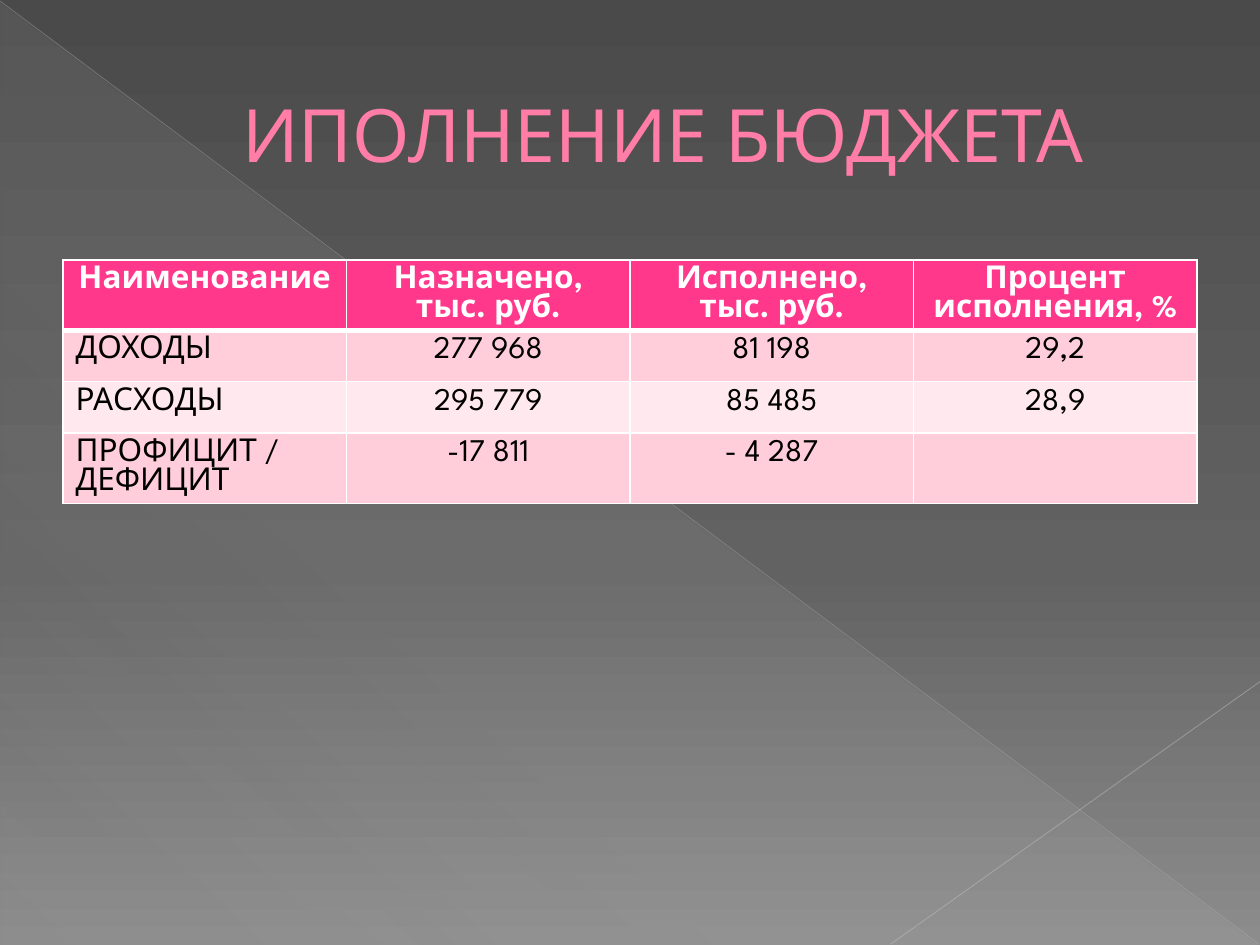
import pptx
import pptx.dml.color
import pptx.enum.shapes
import pptx.enum.text
import pptx.oxml
import pptx.oxml.ns
import pptx.util
from lxml import etree

Pt = pptx.util.Pt
qn = pptx.oxml.ns.qn
ALIGN = pptx.enum.text.PP_ALIGN
COLORS = {
    "title": "FF7DA7", "outline": "B12761", "header": "FF388C",
    "band_dark": "FFCEDA", "band_light": "FFE8EE",
    "white": "FFFFFF", "black": "000000", "haze": "D2D2D2",
    "diagonal": "BFBFBF", "corner": "C6C6C6",
    "bg_top": "4A4A4A", "bg_mid": "626262", "bg_bottom": "8C8C8C",
}
ROWS = [
    ["Наименование", "Назначено, тыс. руб.", "Исполнено, тыс. руб.", "Процент исполнения, %"],
    ["ДОХОДЫ", "277 968", "81 198", "29,2"],
    ["РАСХОДЫ", "295 779", "85 485", "28,9"],
    ["ПРОФИЦИТ / ДЕФИЦИТ", "-17 811", "- 4 287", ""],
]


def rgb(name):
    return pptx.dml.color.RGBColor.from_string(COLORS[name])


def add_color(parent, name, alpha=100):
    clr = etree.SubElement(parent, qn("a:srgbClr"), val=COLORS[name])
    if alpha < 100:
        etree.SubElement(clr, qn("a:alpha"), val=str(alpha * 1000))


def make_line(tag, name, width):
    ln = pptx.oxml.parse_xml(f"<a:{tag} {pptx.oxml.ns.nsdecls('a')}/>")
    ln.set("w", str(Pt(width)))
    add_color(etree.SubElement(ln, qn("a:solidFill")), name)
    return ln


class SlideBuilder:
    font = "League Spartan"

    def __init__(self, prs):
        self.s = prs.slides.add_slide(prs.slide_layouts[5])

    def gradient(self, fill, element, stops, angle):
        """Fill with (position, colour, opacity) stops at a clockwise angle."""
        fill.gradient()
        fill.gradient_angle = 360 - angle
        gs_list = element.find(".//" + qn("a:gsLst"))
        for gs in list(gs_list):
            gs_list.remove(gs)
        for pos, name, alpha in stops:
            add_color(etree.SubElement(gs_list, qn("a:gs"), pos=str(pos * 1000)), name, alpha)

    def background(self, stops, angle):
        self.gradient(self.s.background.fill, self.s.element, stops, angle)

    def triangle(self, box, stops, angle):
        kind = pptx.enum.shapes.MSO_SHAPE.RIGHT_TRIANGLE
        sp = self.s.shapes.add_shape(kind, *map(Pt, box))
        sp.shadow.inherit = False
        sp.line.fill.background()
        self.gradient(sp.fill, sp.element, stops, angle)

    def line(self, ends, name, width, alpha):
        kind = pptx.enum.shapes.MSO_CONNECTOR.STRAIGHT
        cxn = self.s.shapes.add_connector(kind, *map(Pt, ends))
        cxn.line.width = Pt(width)
        cxn.line.color.rgb = rgb(name)
        clr = cxn.element.spPr.find(".//" + qn("a:srgbClr"))
        etree.SubElement(clr, qn("a:alpha"), val=str(alpha * 1000))
        etree.SubElement(cxn.element.spPr, qn("a:effectLst"))

    def text(self, tf, text, color, align, **font):
        p = tf.paragraphs[0]
        p.alignment = align
        r = p.add_run()
        r.text = text
        for key, value in {"name": self.font, **font}.items():
            setattr(r.font, key, value)
        r.font.color.rgb = rgb(color)
        return p, r

    def title(self, text, box):
        sp = self.s.shapes.title
        for key, value in zip(("left", "top", "width", "height"), box):
            setattr(sp, key, Pt(value))
        tf = sp.text_frame
        tf.word_wrap = True
        tf.vertical_anchor = pptx.enum.text.MSO_ANCHOR.MIDDLE
        p, r = self.text(tf, text, "title", ALIGN.CENTER, size=Pt(42))
        pPr = p._p.get_or_add_pPr()
        pPr.set("marL", str(Pt(38)))
        pPr.set("indent", "0")
        r.font._element.insert(0, make_line("ln", "outline", 0.5))
        self.s.shapes.element.append(sp.element)  # in front of the backdrop

    def cell(self, cell, text, row, col):
        header = row == 0
        tcPr = cell._tc.get_or_add_tcPr()
        for side in "LRTB":
            thick = (header and side == "B") or (row == 1 and side == "T")
            tcPr.append(make_line("ln" + side, "white", 3 if thick else 1))
        cell.fill.solid()
        cell.fill.fore_color.rgb = rgb(
            "header" if header else "band_dark" if row % 2 else "band_light")
        if text:
            self.text(cell.text_frame, text, "white" if header else "black",
                      ALIGN.CENTER if header or col else ALIGN.LEFT,
                      size=Pt(18), bold=header)

    def table(self, rows, left, top, width, row_height):
        box = (left, top, width, row_height * len(rows))
        table = self.s.shapes.add_table(len(rows), len(rows[0]), *map(Pt, box)).table
        for i, row in enumerate(rows):
            for j, text in enumerate(row):
                self.cell(table.cell(i, j), text, i, j)


def main():
    prs = pptx.Presentation()
    prs.slide_width, prs.slide_height = Pt(720), Pt(540)
    b = SlideBuilder(prs)
    b.background([(0, "bg_top", 100), (60, "bg_mid", 100), (100, "bg_bottom", 100)], 90)
    b.triangle((0.5, 1, 719, 539),
               [(0, "haze", 10), (70, "haze", 8), (100, "haze", 1)], 133)
    b.line((0, 0.5, 719.5, 539.5), "diagonal", 0.39, 35)
    b.line((720, 389.5, 509, 539.5), "corner", 0.47, 45)
    b.title("ИПОЛНЕНИЕ БЮДЖЕТА", (36, 21, 648, 110))
    b.table(ROWS, 36, 148.5, 648, 29.2)
    prs.save("out.pptx")


if __name__ == "__main__":
    main()
